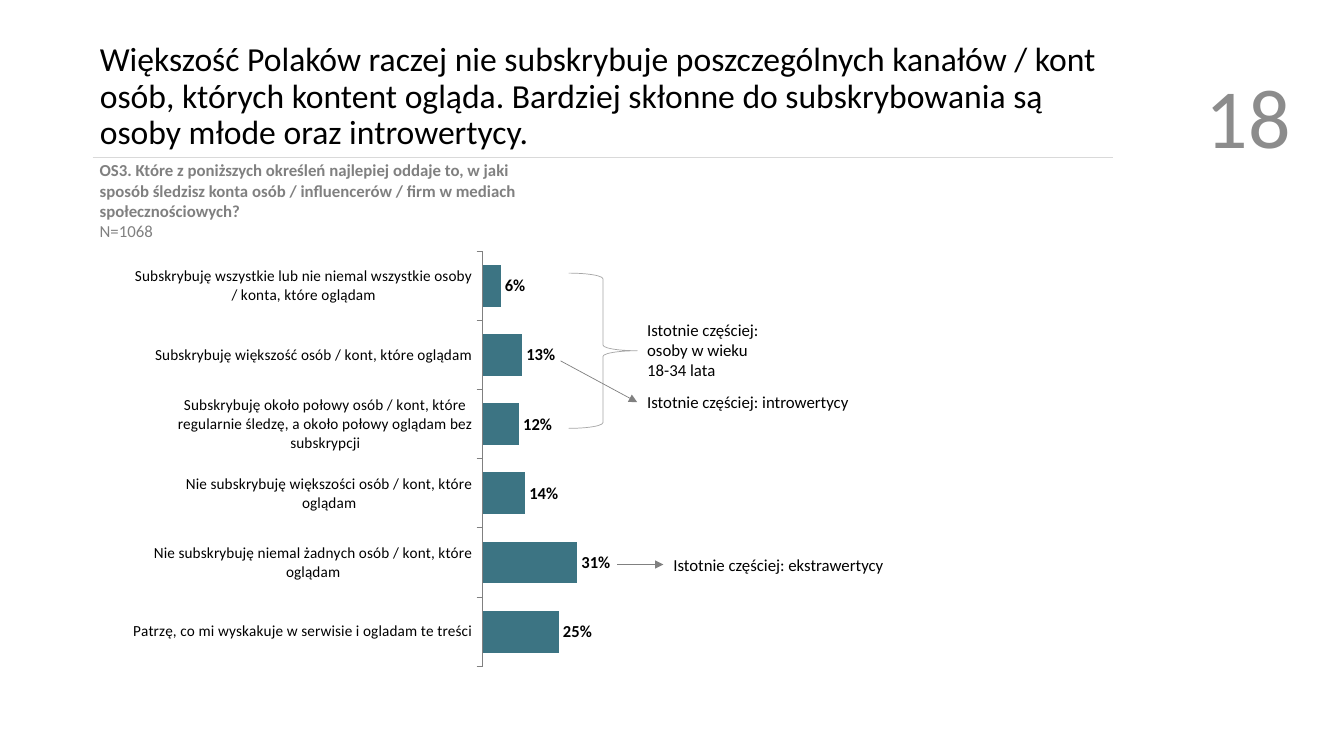
from dataclasses import dataclass

from lxml.etree import SubElement
from pptx import Presentation
from pptx.chart.data import CategoryChartData
from pptx.dml.color import RGBColor
from pptx.enum.chart import XL_CHART_TYPE, XL_LABEL_POSITION, XL_TICK_LABEL_POSITION, XL_TICK_MARK
from pptx.enum.shapes import MSO_CONNECTOR, MSO_SHAPE
from pptx.enum.text import MSO_ANCHOR, MSO_AUTO_SIZE, PP_ALIGN
from pptx.oxml.ns import qn
from pptx.shapes.autoshape import Shape
from pptx.shapes.connector import Connector
from pptx.slide import Slide
from pptx.text.text import Font
from pptx.util import Inches, Pt

BLACK = RGBColor(0x00, 0x00, 0x00)
GRAY = RGBColor(0x80, 0x80, 0x80)
NUMBER_GRAY = RGBColor(0x8C, 0x8C, 0x8C)
BRACE_GRAY = RGBColor(0xA6, 0xA6, 0xA6)
RULE_GRAY = RGBColor(0xD9, 0xD9, 0xD9)
TEAL = RGBColor(0x3C, 0x74, 0x83)
FONT_NAME = "Calibri"

TITLE = (
    "Większość Polaków raczej nie subskrybuje poszczególnych kanałów / kont osób, "
    "których kontent ogląda. Bardziej skłonne do subskrybowania są osoby młode oraz introwertycy."
)
QUESTION = (
    "OS3. Które z poniższych określeń najlepiej oddaje to, w jaki sposób śledzisz konta "
    "osób / influencerów / firm w mediach społecznościowych?"
)
SAMPLE = "N=1068"

ANSWERS = {
    "Subskrybuję wszystkie lub nie niemal wszystkie osoby / konta, które oglądam": 0.06,
    "Subskrybuję większość osób / kont, które oglądam": 0.13,
    "Subskrybuję około połowy osób / kont, które regularnie śledzę, "
    "a około połowy oglądam bez subskrypcji": 0.12,
    "Nie subskrybuję większości osób / kont, które oglądam": 0.14,
    "Nie subskrybuję niemal żadnych osób / kont, które oglądam": 0.31,
    "Patrzę, co mi wyskakuje w serwisie i ogladam te treści": 0.25,
}
PLOT_LAYOUT = {"x": 0.5, "y": 0.01, "w": 0.45, "h": 0.94}


@dataclass(frozen=True)
class Box:
    left: float
    top: float
    width: float
    height: float

    def lengths(self) -> tuple[int, int, int, int]:
        return Inches(self.left), Inches(self.top), Inches(self.width), Inches(self.height)


@dataclass(frozen=True)
class Callout:
    text: str
    box: Box
    arrow_start: tuple[float, float] | None = None


CALLOUTS = (
    Callout("Istotnie częściej: osoby w wieku 18-34 lata", Box(6.32, 3.12, 1.38, 0.71)),
    Callout("Istotnie częściej: introwertycy", Box(6.32, 3.84, 3.1, 0.3), (5.56, 3.58)),
    Callout("Istotnie częściej: ekstrawertycy", Box(6.58, 5.45, 3.1, 0.3), (6.12, 5.6)),
)


def set_font(font: Font, size: float, color: RGBColor, bold: bool = False) -> None:
    font.name = FONT_NAME
    font.size = Pt(size)
    font.bold = bold
    font.color.rgb = color


def add_text(slide: Slide, box: Box, text: str, size: float, color: RGBColor) -> Shape:
    shape = slide.shapes.add_textbox(*box.lengths())
    shape.text_frame.word_wrap = True
    shape.text_frame.text = text
    for run in shape.text_frame.paragraphs[0].runs:
        set_font(run.font, size, color)
    return shape


def add_line(
    slide: Slide, start: tuple[float, float], end: tuple[float, float], color: RGBColor, width: float
) -> Connector:
    line = slide.shapes.add_connector(
        MSO_CONNECTOR.STRAIGHT, *(Inches(value) for value in start + end)
    )
    line.line.color.rgb = color
    line.line.width = Pt(width)
    SubElement(line._element.spPr, qn("a:effectLst"))
    return line


def add_title(slide: Slide) -> None:
    title = slide.shapes.title
    title.left, title.top, title.width, title.height = Box(0.89, 0.24, 10.11, 1.45).lengths()
    frame = title.text_frame
    frame.text = TITLE
    frame.word_wrap = True
    frame.auto_size = MSO_AUTO_SIZE.NONE
    frame.vertical_anchor = MSO_ANCHOR.MIDDLE
    paragraph = frame.paragraphs[0]
    paragraph.alignment = PP_ALIGN.LEFT
    paragraph.line_spacing = 0.9
    set_font(paragraph.runs[0].font, 24, BLACK)


def add_slide_number(slide: Slide) -> None:
    number = add_text(slide, Box(11.32, 0.43, 1.58, 1.42), "18", 60, NUMBER_GRAY)
    number.text_frame.vertical_anchor = MSO_ANCHOR.MIDDLE
    number.text_frame.paragraphs[0].alignment = PP_ALIGN.RIGHT


def add_question(slide: Slide) -> None:
    question = add_text(slide, Box(0.89, 1.54, 4.57, 0.91), f"{QUESTION}\v{SAMPLE}", 12, GRAY)
    question.text_frame.auto_size = MSO_AUTO_SIZE.SHAPE_TO_FIT_TEXT
    question.text_frame.paragraphs[0].runs[0].font.bold = True


def add_answer_chart(slide: Slide) -> None:
    data = CategoryChartData(number_format="0%")
    data.categories = list(ANSWERS)
    data.add_series("Series 1", list(ANSWERS.values()))
    chart = slide.shapes.add_chart(
        XL_CHART_TYPE.BAR_CLUSTERED, *Box(1.32, 2.45, 6.84, 4.38).lengths(), data
    ).chart
    chart.has_legend = False
    chart.has_title = False
    set_font(chart.font, 10, BLACK)

    category_axis = chart.category_axis
    category_axis.reverse_order = True
    category_axis.has_major_gridlines = False
    category_axis.major_tick_mark = XL_TICK_MARK.OUTSIDE
    category_axis.tick_label_position = XL_TICK_LABEL_POSITION.LOW
    category_axis.format.line.color.rgb = GRAY
    category_axis.format.line.width = Pt(0.75)
    set_font(category_axis.tick_labels.font, 11, BLACK)

    value_axis = chart.value_axis
    value_axis.minimum_scale = 0
    value_axis.maximum_scale = 1
    value_axis.has_major_gridlines = False
    value_axis.visible = False

    plot = chart.plots[0]
    plot.gap_width = 66
    plot.vary_by_categories = False
    fill = plot.series[0].format.fill
    fill.solid()
    fill.fore_color.rgb = TEAL
    labels = plot.series[0].data_labels
    labels.show_value = True
    labels.number_format = "0%"
    labels.number_format_is_linked = False
    labels.position = XL_LABEL_POSITION.OUTSIDE_END
    set_font(labels.font, 12, BLACK, bold=True)

    plot_area = chart.element.find(f".//{qn('c:plotArea')}")
    layout = SubElement(plot_area, qn("c:layout"))
    plot_area.insert(0, layout)
    manual = SubElement(layout, qn("c:manualLayout"))
    settings = {"layoutTarget": "inner", "xMode": "edge", "yMode": "edge", **PLOT_LAYOUT}
    for name, value in settings.items():
        SubElement(manual, qn(f"c:{name}")).set("val", str(value))


def add_brace(slide: Slide) -> None:
    brace = slide.shapes.add_shape(MSO_SHAPE.RIGHT_BRACE, *Box(5.64, 2.71, 0.68, 1.54).lengths())
    brace.shadow.inherit = False
    brace.fill.background()
    brace.line.color.rgb = BRACE_GRAY
    brace.line.width = Pt(0.5)


def add_callout(slide: Slide, callout: Callout) -> None:
    box = callout.box
    label = add_text(slide, box, callout.text, 12, BLACK)
    label.text_frame.auto_size = MSO_AUTO_SIZE.SHAPE_TO_FIT_TEXT
    if callout.arrow_start:
        end = (box.left, box.top + box.height / 2)
        arrow = add_line(slide, callout.arrow_start, end, GRAY, 0.5)
        arrow.end_connect(label, 1)
        SubElement(arrow.line._get_or_add_ln(), qn("a:tailEnd")).set("type", "triangle")


def main() -> None:
    presentation = Presentation()
    presentation.slide_width = Inches(13.33)
    presentation.slide_height = Inches(7.5)
    slide = presentation.slides.add_slide(presentation.slide_layouts.get_by_name("Title Only"))
    add_line(slide, (0.92, 1.56), (11.04, 1.56), RULE_GRAY, 0.75)
    add_slide_number(slide)
    add_title(slide)
    add_question(slide)
    add_answer_chart(slide)
    add_brace(slide)
    for callout in CALLOUTS:
        add_callout(slide, callout)
    presentation.save("out.pptx")


if __name__ == "__main__":
    main()
